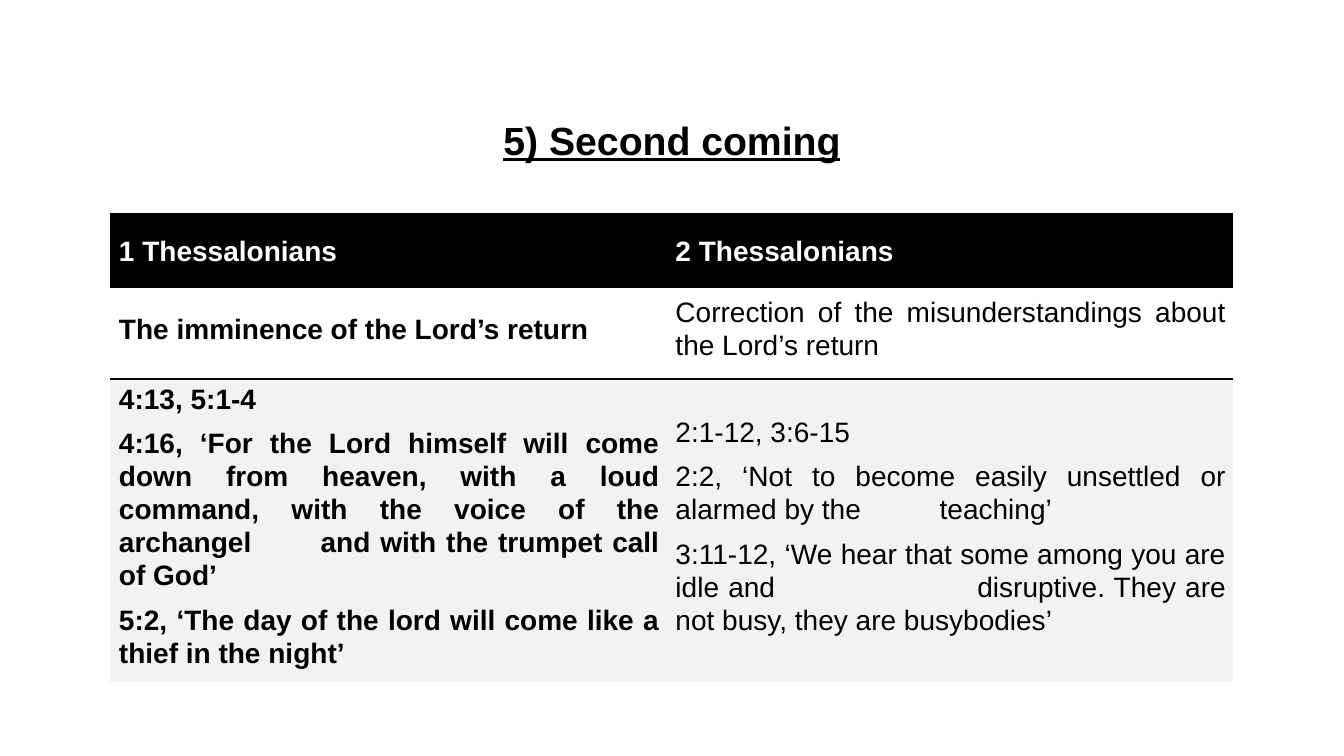
from dataclasses import dataclass

from lxml.etree import SubElement
from pptx import Presentation
from pptx.dml.color import RGBColor
from pptx.enum.text import MSO_ANCHOR, PP_ALIGN
from pptx.oxml import parse_xml
from pptx.oxml.ns import nsdecls, qn
from pptx.util import Inches, Pt

TITLE = "5) Second coming"
ROWS = [
    (["1 Thessalonians"], ["2 Thessalonians"]),
    (["The imminence of the Lord’s return"],
     ["Correction of the misunderstandings about the Lord’s return"]),
    (["4:13, 5:1-4",
      "4:16, ‘For the Lord himself will come down from heaven, with a loud "
      "command, with the voice of the archangel\tand with the trumpet call of God’",
      "5:2, ‘The day of the lord will come like a thief in the night’"],
     ["2:1-12, 3:6-15",
      "2:2, ‘Not to become easily unsettled or alarmed by the\tteaching’",
      "3:11-12, ‘We hear that some among you are idle and\tdisruptive. "
      "They are not busy, they are busybodies’"]),
]
# Tab stops in inches, by (row, column, paragraph)
TABS = {(2, 0, 1): 2.0, (2, 1, 1): 2.62, (2, 1, 2): 2.98}


@dataclass(frozen=True)
class Theme:
    font: str = "Arial"
    head: int = 28
    body: int = 20
    ink: str = "000000"
    paper: str = "FFFFFF"
    band: str = "F2F2F2"


LOOK = Theme()
SIZE = (13.33, 7.5)
TITLE_BOX = (0.95, 0.66, 11.43, 1.45)
LEFT, TOP = 1.09, 2.11
COLS = (5.52, 5.62)
HEIGHTS = (0.75, 0.9, 2.61)
FILLS = (LOOK.ink, None, LOOK.band)
PLAIN = "{2D5ABB26-0587-4C30-8999-92F81FD0307C}"


def style(para, size, color, bold):
    for run in para.runs:
        font = run.font
        font.name, font.size, font.bold = LOOK.font, Pt(size), bold
        font.color.rgb = RGBColor.from_string(color)


def add_title(slide):
    title = slide.shapes.title
    title.left, title.top, title.width, title.height = map(Inches, TITLE_BOX)
    frame = title.text_frame
    frame.text = TITLE
    frame.vertical_anchor = MSO_ANCHOR.MIDDLE
    para = frame.paragraphs[0]
    para.alignment = PP_ALIGN.CENTER
    style(para, LOOK.head, LOOK.ink, True)
    para.runs[0].font.underline = True


def rule(cell, side):
    """Draw a one-point line on the given side, B or T."""
    line = parse_xml(
        f'<a:ln{side} {nsdecls("a")} w="{Pt(1)}"><a:solidFill>'
        f'<a:srgbClr val="{LOOK.ink}"/></a:solidFill></a:ln{side}>')
    cell._tc.get_or_add_tcPr().insert(0, line)


def set_tab(para, stop):
    tabs = SubElement(para._p.get_or_add_pPr(), qn("a:tabLst"))
    SubElement(tabs, qn("a:tab"), pos=str(Inches(stop)), algn="l")


def fill_cell(cell, row, col, lines):
    cell.vertical_anchor = MSO_ANCHOR.MIDDLE
    cell.margin_left, cell.margin_right = Inches(0.09), Inches(0.07)
    cell.margin_top = Inches(0.03 if row else 0.13)
    cell.margin_bottom = Inches(0.13)
    if FILLS[row]:
        cell.fill.solid()
        cell.fill.fore_color.rgb = RGBColor.from_string(FILLS[row])
    else:
        cell.fill.background()
    if row:
        rule(cell, "B" if row == 1 else "T")
    cell.text_frame.text = "\n".join(lines)
    for at, para in enumerate(cell.text_frame.paragraphs):
        para.alignment = PP_ALIGN.JUSTIFY
        para.line_spacing, para.space_after = 1.06, Pt(8)
        style(para, LOOK.body, LOOK.ink if row else LOOK.paper,
              row == 0 or col == 0)
        if (row, col, at) in TABS:
            set_tab(para, TABS[row, col, at])


def add_grid(slide):
    box = map(Inches, (LEFT, TOP, sum(COLS), sum(HEIGHTS)))
    table = slide.shapes.add_table(len(ROWS), len(COLS), *box).table
    table._tbl.tblPr.find(qn("a:tableStyleId")).text = PLAIN
    table.horz_banding = False
    for part, width in zip(table.columns, COLS):
        part.width = Inches(width)
    for part, height in zip(table.rows, HEIGHTS):
        part.height = Inches(height)
    for row, cells in enumerate(ROWS):
        for col, lines in enumerate(cells):
            fill_cell(table.cell(row, col), row, col, lines)


def main():
    deck = Presentation()
    deck.slide_width, deck.slide_height = map(Inches, SIZE)
    slide = deck.slides.add_slide(deck.slide_layouts[5])
    add_title(slide)
    add_grid(slide)
    deck.save("out.pptx")


if __name__ == "__main__":
    main()
